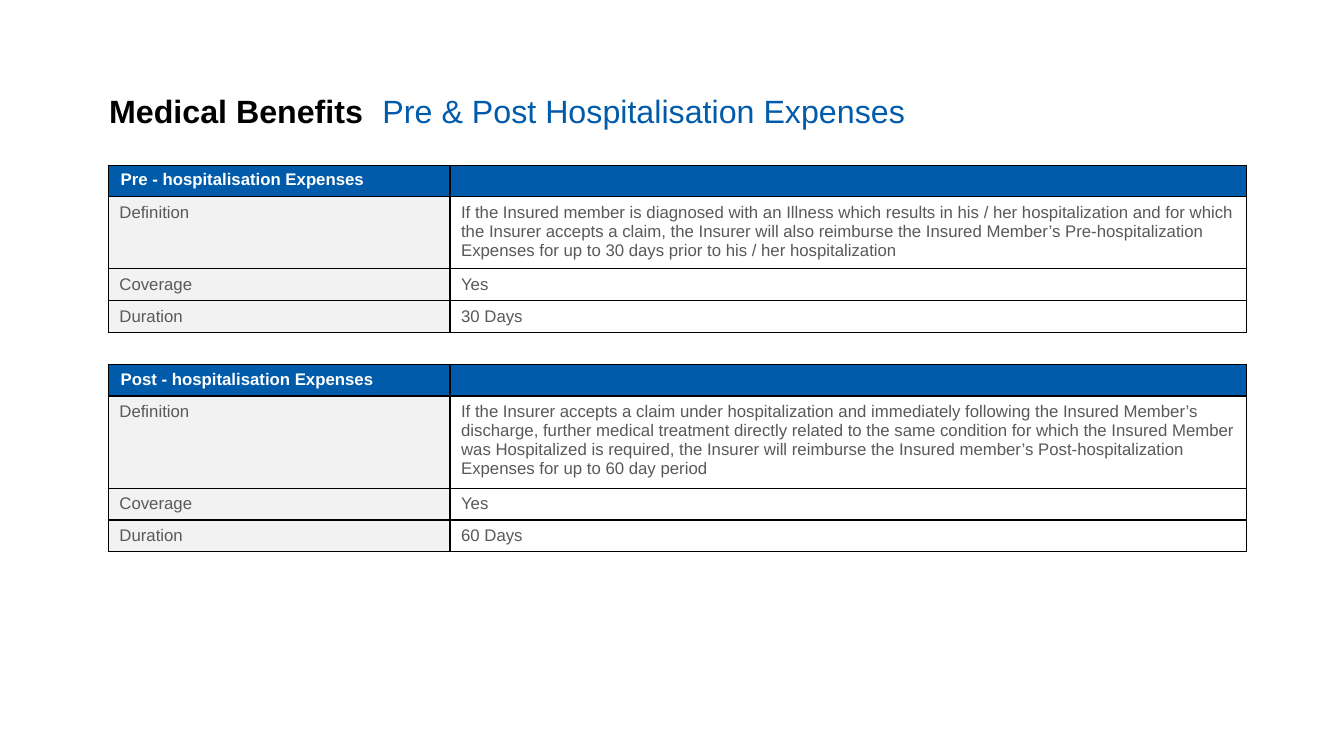
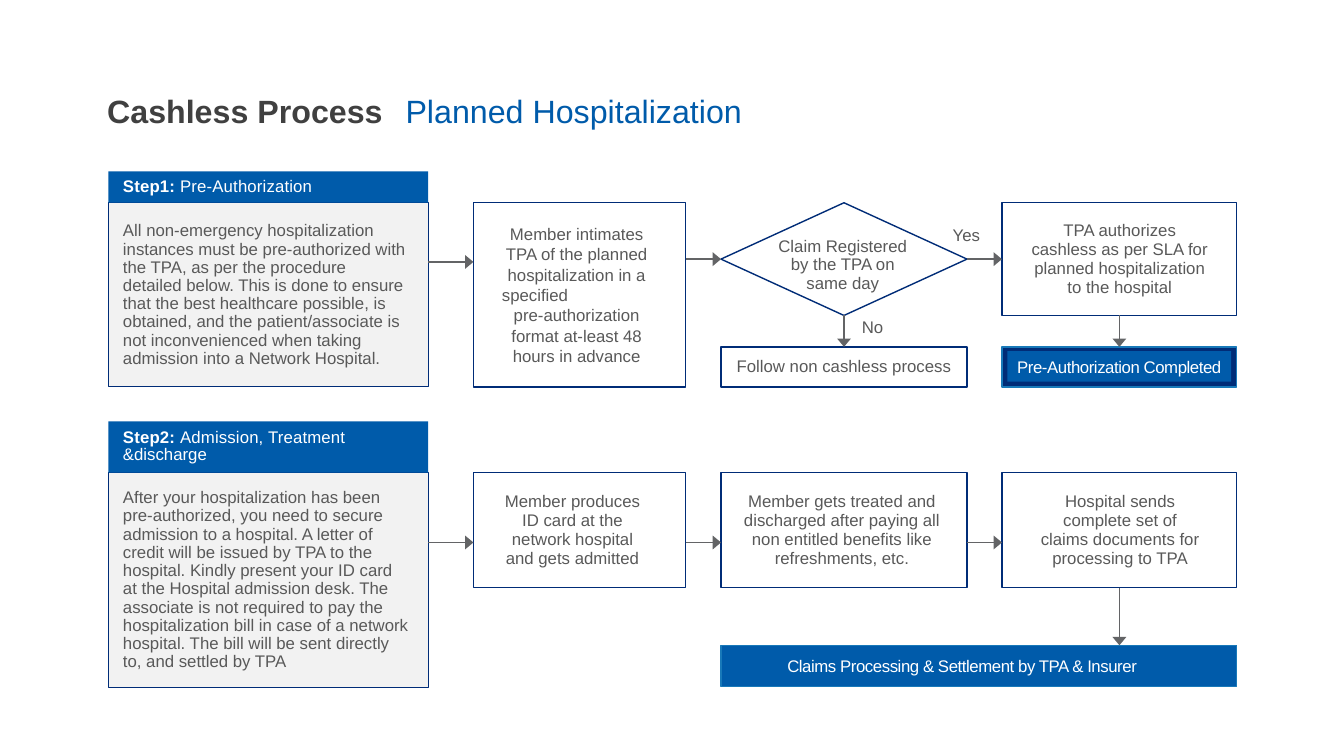
from lxml import etree
from pptx import Presentation, util as u
from pptx.dml.color import RGBColor
from pptx.enum import shapes, text
from pptx.oxml.ns import qn

# Shared look
FONT = "Arial"
BLUE, NAVY, RIM, GREY, PALE = "005BAA", "002C77", "1879B9", "636466", "F2F2F2"
BODY, WHITE, BLACK = "595959", "FFFFFF", "000000"
CENTER, LEFT = text.PP_ALIGN.CENTER, text.PP_ALIGN.LEFT
MIDDLE, TOP = text.MSO_ANCHOR.MIDDLE, text.MSO_ANCHOR.TOP
RECT, DIAMOND = shapes.MSO_SHAPE.RECTANGLE, shapes.MSO_SHAPE.DIAMOND

# Slide 1: title, title colour, title left, subtitle, subtitle left (cm)
BENEFITS_TITLE = ("Medical Benefits", BLACK, 2.75,
                  "Pre & Post Hospitalisation Expenses", 9.64)
TABLE_LEFT, TABLE_COLUMNS, ROW_HEIGHT = 2.73, (8.61, 20.07), 0.79
BENEFIT_TABLES = [  # top, definition row height, rows
    (4.17, 1.8, [
        ("Pre - hospitalisation Expenses", ""),
        ("Definition", "If the Insured member is diagnosed with an Illness which "
         "results in his / her hospitalization and for which the Insurer accepts a "
         "claim, the Insurer will also reimburse the Insured Member’s "
         "Pre-hospitalization Expenses for up to 30 days prior to his / her "
         "hospitalization"),
        ("Coverage", "Yes"),
        ("Duration", "30 Days")]),
    (9.19, 2.3, [
        ("Post - hospitalisation Expenses", ""),
        ("Definition", "If the Insurer accepts a claim under hospitalization and "
         "immediately following the Insured Member’s discharge, further medical "
         "treatment directly related to the same condition for which the Insured "
         "Member was Hospitalized is required, the Insurer will reimburse the "
         "Insured member’s Post-hospitalization Expenses for up to 60 day period"),
        ("Coverage", "Yes"),
        ("Duration", "60 Days")]),
]

# Slide 2: flow columns as (left, width), in cm
PROCESS_TITLE = ("Cashless Process", "404040", 2.7, "Planned Hospitalization", 10.22)
STEP, MEMBER, CLAIM, TPA = (2.73, 8.06), (11.93, 5.35), (18.17, 6.2), (25.25, 5.92)
STEPS = [  # top, header bottom, bottom, label, header lines, body paragraphs
    (4.32, 5.11, 9.75, "Step1: ", ["Pre-Authorization"], [
        "All non-emergency hospitalization instances must be pre-authorized with "
        "the TPA, as per the procedure\vdetailed below. This is done to ensure that "
        "the best healthcare possible, is obtained, and the patient/associate is "
        "not inconvenienced when taking admission into a Network Hospital."]),
    (10.62, 11.91, 17.32, "Step2: ", ["Admission, Treatment", "&discharge"], [
        "After your hospitalization has been pre-authorized, you need to secure "
        "admission to a hospital. A letter of credit will be issued by TPA to the",
        "hospital. Kindly present your ID card at the Hospital admission desk. The "
        "associate is not required to pay the hospitalization bill in case of a "
        "network hospital. The bill will be sent directly to, and settled by TPA"]),
]
NODES = [  # column, top, bottom, left and right inset, line pitch, paragraphs
    (MEMBER, 5.11, 9.75, (0.6, 0.74), 14.5, [
        "Member intimates TPA of the planned hospitalization in a", "specified",
        "pre-authorization format at-least 48 hours in advance"]),
    (TPA, 5.11, 7.95, (0.64, 0.62), 13.5, [
        "TPA authorizes\vcashless as per SLA for\vplanned hospitalization\v"
        "to the hospital"]),
    (CLAIM, 8.74, 9.75, (0, 0), 13.5, ["Follow non cashless process"]),
    (MEMBER, 11.91, 14.81, (0.61, 0.96), 13.5, [
        "Member produces ID card at the network hospital and gets admitted"]),
    (CLAIM, 11.91, 14.81, (0.41, 0.51), 13.5, [
        "Member gets treated and discharged after paying all non entitled benefits "
        "like refreshments, etc."]),
    (TPA, 11.91, 14.81, (0.86, 0.82), 13.5, [
        "Hospital sends\vcomplete set of\vclaims documents for\vprocessing to TPA"]),
]
LABELS = [("Yes", 24.01, 5.66), ("No", 21.72, 7.98)]
ACROSS = [  # from column, to column, y
    (STEP, MEMBER, 6.6), (MEMBER, CLAIM, 6.53), (CLAIM, TPA, 6.53),
    (STEP, MEMBER, 13.67), (MEMBER, CLAIM, 13.67), (CLAIM, TPA, 13.67)]
DOWN = [(CLAIM, 7.95, 8.74), (TPA, 7.95, 8.74), (TPA, 14.81, 16.26)]  # column, y, y


def rgb(value):
    return RGBColor.from_string(value)


def style(para, color, size=12, bold=False, align=LEFT, pitch=None, tracking=0):
    para.alignment = align
    if pitch:
        para.line_spacing = u.Pt(pitch)
    for span in para.runs:
        font = span.font
        font.name, font.size, font.bold = FONT, u.Pt(size), bold
        font.color.rgb = rgb(color)
        if tracking:
            span._r.get_or_add_rPr().set("spc", str(round(tracking * 100)))


def write(shape, lines, color, insets=(0, 0), anchor=MIDDLE, wrap=True, **look):
    frame = shape.text_frame
    frame.word_wrap, frame.vertical_anchor = wrap, anchor
    frame.margin_left, frame.margin_right = map(u.Cm, insets)
    frame.margin_top = frame.margin_bottom = 0
    frame.text = "\n".join(lines)
    for para in frame.paragraphs:
        style(para, color, **look)
    return frame


def add_box(page, left, top, width, height, fill=None, line=None, weight=1, kind=RECT):
    box = page.shapes.add_shape(kind, *map(u.Cm, (left, top, width, height)))
    box.shadow.inherit = False
    if fill:
        box.fill.solid()
        box.fill.fore_color.rgb = rgb(fill)
    else:
        box.fill.background()
    if line:
        box.line.color.rgb, box.line.width = rgb(line), u.Pt(weight)
    else:
        box.line.fill.background()
    return box


def add_label(page, words, color, left, top, width, height, **look):
    box = page.shapes.add_textbox(*map(u.Cm, (left, top, width, height)))
    write(box, [words], color, anchor=TOP, **look)


def add_arrow(page, x1, y1, x2, y2):
    arrow = page.shapes.add_connector(
        shapes.MSO_CONNECTOR.STRAIGHT, *map(u.Cm, (x1, y1, x2, y2)))
    arrow.line.color.rgb, arrow.line.width = rgb(GREY), u.Pt(1)
    etree.SubElement(arrow.line._get_or_add_ln(), qn("a:tailEnd"),
                     type="triangle", w="lg", len="med")
    etree.SubElement(arrow._element.spPr, qn("a:effectLst"))


def add_page(deck, title, color, left, subtitle, subtitle_left):
    page = deck.slides.add_slide(deck.slide_layouts[6])
    look = dict(size=23, pitch=34)
    title_width = subtitle_left - left - 0.05
    add_label(page, subtitle, BLUE, subtitle_left, 2.08, 14, 1.09, **look)
    add_label(page, title, color, left, 2.08, title_width, 1.09, bold=True, **look)
    return page


def add_borders(cell):
    props = cell._tc.get_or_add_tcPr()
    for index, side in enumerate(("a:lnL", "a:lnR", "a:lnT", "a:lnB")):
        line = etree.Element(qn(side), w=str(u.Pt(1)))
        fill = etree.SubElement(line, qn("a:solidFill"))
        etree.SubElement(fill, qn("a:srgbClr"), val=BLACK)
        props.insert(index, line)


def add_benefit_table(page, top, definition_height, rows):
    heights = [ROW_HEIGHT, definition_height, ROW_HEIGHT, ROW_HEIGHT]
    table = page.shapes.add_table(
        len(rows), 2, u.Cm(TABLE_LEFT), u.Cm(top),
        u.Cm(sum(TABLE_COLUMNS)), u.Cm(sum(heights))).table
    table.horz_banding = False
    for column, width in zip(table.columns, TABLE_COLUMNS):
        column.width = u.Cm(width)
    for r, (row, height) in enumerate(zip(rows, heights)):
        table.rows[r].height = u.Cm(height)
        header = r == 0
        for c, words in enumerate(row):
            cell = table.cell(r, c)
            cell.margin_left = u.Cm(0.31 if header else 0.28)
            cell.margin_right = u.Cm(0.28)
            cell.margin_top = u.Cm(0.13 if header else 0.16)
            cell.margin_bottom = u.Cm(0.13)
            cell.text = words
            para = cell.text_frame.paragraphs[0]
            style(para, WHITE if header else BODY, bold=header)
            if not words:  # keeps an empty cell from growing its row
                etree.SubElement(para._p, qn("a:endParaRPr"), sz="1200")
            if header or c == 0:
                cell.fill.solid()
                cell.fill.fore_color.rgb = rgb(BLUE if header else PALE)
            else:
                cell.fill.background()
            add_borders(cell)


def add_step(page, top, split, bottom, label, header_lines, body):
    left, width = STEP
    panel = add_box(page, left, split, width, bottom - split, PALE, NAVY, 0.75)
    write(panel, body, BODY, (0.37, 0.45), pitch=13)
    header = add_box(page, left, top, width, split - top, BLUE)
    frame = write(header, [""] + header_lines[1:], WHITE, (0.37, 0.3), pitch=12)
    first = frame.paragraphs[0]
    for words in (label, header_lines[0]):
        first.add_run().text = words
    style(first, WHITE, pitch=12, tracking=0.1)
    first.runs[0].font.bold = True


def build_process(page):
    for step in STEPS:
        add_step(page, *step)

    # Process boxes
    for (left, width), top, bottom, insets, pitch, lines in NODES:
        node = add_box(page, left, top, width, bottom - top, WHITE, NAVY)
        frame = write(node, lines, BODY, insets, align=CENTER, pitch=pitch)
        for para in frame.paragraphs:
            if para.text == "specified":
                para.alignment = LEFT
                para._p.get_or_add_pPr().set("marL", str(u.Cm(0.12)))

    # Decision
    left, width = CLAIM
    add_box(page, left, 5.11, width, 2.84, line=NAVY, kind=DIAMOND)
    add_label(page, "Claim Registered by the TPA on same day", BODY,
              19.41, 5.96, 3.66, 1.5, align=CENTER, pitch=13.5)
    for words, x, y in LABELS:
        add_label(page, words, BODY, x, y, 0.96, 0.51, wrap=False)

    # Outcomes
    outcome = dict(align=CENTER, tracking=-0.3, wrap=False)
    right, right_width = TPA
    add_box(page, right, 8.74, right_width, 1.01, NAVY, RIM)
    done = add_box(page, right + 0.14, 8.85, right_width - 0.28, 0.77, BLUE)
    write(done, ["Pre-Authorization Completed"], WHITE, **outcome)
    settled = add_box(page, left, 16.26, right + right_width - left, 1.04, BLUE, RIM)
    write(settled, ["Claims Processing & Settlement by TPA & Insurer"], WHITE,
          (0, 0.84), **outcome)

    # Arrows
    for (start, width), (end, _), y in ACROSS:
        add_arrow(page, start + width, y, end, y)
    for (left, width), y1, y2 in DOWN:
        middle = left + width / 2
        add_arrow(page, middle, y1, middle, y2)


def main():
    deck = Presentation()
    deck.slide_width, deck.slide_height = u.Cm(33.87), u.Cm(19.05)
    benefits = add_page(deck, *BENEFITS_TITLE)
    for benefit in BENEFIT_TABLES:
        add_benefit_table(benefits, *benefit)
    build_process(add_page(deck, *PROCESS_TITLE))
    deck.save("out.pptx")


if __name__ == "__main__":
    main()
